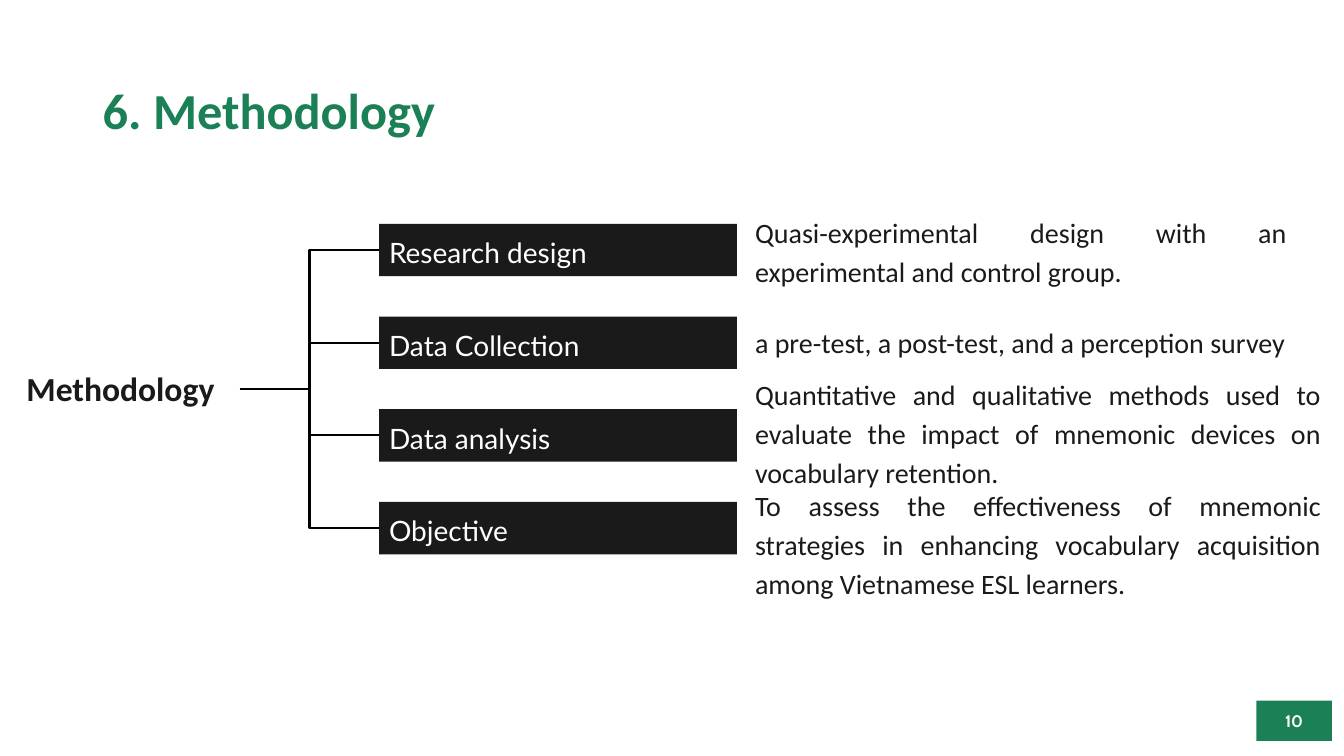
from dataclasses import dataclass
from lxml import etree
from pptx import Presentation
from pptx.dml.color import RGBColor as RGB
from pptx.enum.shapes import MSO_CONNECTOR as Link, MSO_SHAPE as Shape
from pptx.enum.text import MSO_ANCHOR as Anchor, PP_ALIGN as Align
from pptx.oxml.ns import qn
from pptx.util import Inches, Pt


@dataclass(frozen=True)
class Theme:
    green: RGB = RGB(0x1B, 0x80, 0x56)
    ink: RGB = RGB(0x1A, 0x1A, 0x1A)
    white: RGB = RGB(255, 255, 255)
    black: RGB = RGB(0, 0, 0)
    body: str = "Calibri"
    label: str = "Lato"
    number: str = "Cabin"
    title_size: int = 36
    root_size: int = 24
    text_size: int = 20
    page_size: int = 12


class Page:
    def __init__(self, slide, theme):
        self.slide, self.theme = slide, theme

    def letter(self, shape, text, size, color, font, bold=False,
               align=Align.LEFT, space=1.0, inset=0.1, anchor=Anchor.MIDDLE):
        """Fill a shape with one styled paragraph; inset is top and bottom."""
        frame = shape.text_frame
        frame.word_wrap = True
        frame.vertical_anchor = anchor
        frame.margin_left = frame.margin_right = Inches(0.1)
        frame.margin_top = frame.margin_bottom = Inches(inset)
        para = frame.paragraphs[0]
        para.alignment, para.line_spacing = align, space
        run = para.add_run()
        run.text = text
        run.font.name, run.font.size, run.font.bold = font, Pt(size), bold
        run.font.color.rgb = color

    def text(self, box, text, size, color, **style):
        shape = self.slide.shapes.add_textbox(*map(Inches, box))
        self.letter(shape, text, size, color, self.theme.body, **style)

    def block(self, box, fill, text, size, font, **style):
        shape = self.slide.shapes.add_shape(Shape.RECTANGLE, *map(Inches, box))
        shape.shadow.inherit = False
        shape.fill.solid()
        shape.fill.fore_color.rgb = fill
        shape.line.fill.background()
        self.letter(shape, text, size, self.theme.white, font, **style)

    def elbow(self, start, end):
        line = self.slide.shapes.add_connector(
            Link.ELBOW, *map(Inches, (*start, *end)))
        line.line.color.rgb = self.theme.black
        line.line.width = Pt(1.5)
        etree.SubElement(line._element.spPr, qn("a:effectLst"))


# label, detail, detail top, detail width
STEPS = [
    ("Research design",
     "Quasi-experimental design with an experimental and control group.",
     2.09, 5.47),
    ("Data Collection",
     "a pre-test, a post-test, and a perception survey",
     2.99, 5.47),
    ("Data analysis",
     "Quantitative and qualitative methods used to evaluate the impact of "
     "mnemonic devices on vocabulary retention.",
     3.89, 5.81),
    ("Objective",
     "To assess the effectiveness of mnemonic strategies in enhancing "
     "vocabulary acquisition among Vietnamese ESL learners.",
     4.99, 5.81),
]
ROOT = (2.38, 3.86)
LEFT, TOP, PITCH, WIDTH, HEIGHT = 3.76, 2.22, 0.92, 3.55, 0.52


def main():
    deck = Presentation()
    deck.slide_width, deck.slide_height = Inches(13.33), Inches(7.5)
    theme = Theme()
    page = Page(deck.slides.add_slide(deck.slide_layouts[6]), theme)

    page.text((0.92, 0.4, 11.5, 1.45), "6. Methodology", theme.title_size,
              theme.green, bold=True, align=Align.JUSTIFY, space=0.9,
              inset=0.05)
    page.block((12.46, 6.95, 0.75, 0.4), theme.green, "10", theme.page_size,
               theme.number, bold=True, align=Align.CENTER, inset=0.05)

    for row, (label, detail, top, width) in enumerate(STEPS):
        y = TOP + row * PITCH
        page.elbow(ROOT, (LEFT, y + HEIGHT / 2))
        page.block((LEFT, y, WIDTH, HEIGHT), theme.ink, label,
                   theme.text_size, theme.label, space=1.15)
        page.text((7.39, top, width, 0.77), detail, theme.text_size,
                  theme.ink, align=Align.JUSTIFY, space=1.15)

    page.text((-0.07, 3.6, 2.53, 0.46), "Methodology", theme.root_size,
              theme.ink, bold=True, align=Align.CENTER, space=0.9,
              anchor=Anchor.TOP)
    deck.save("out.pptx")


if __name__ == "__main__":
    main()
